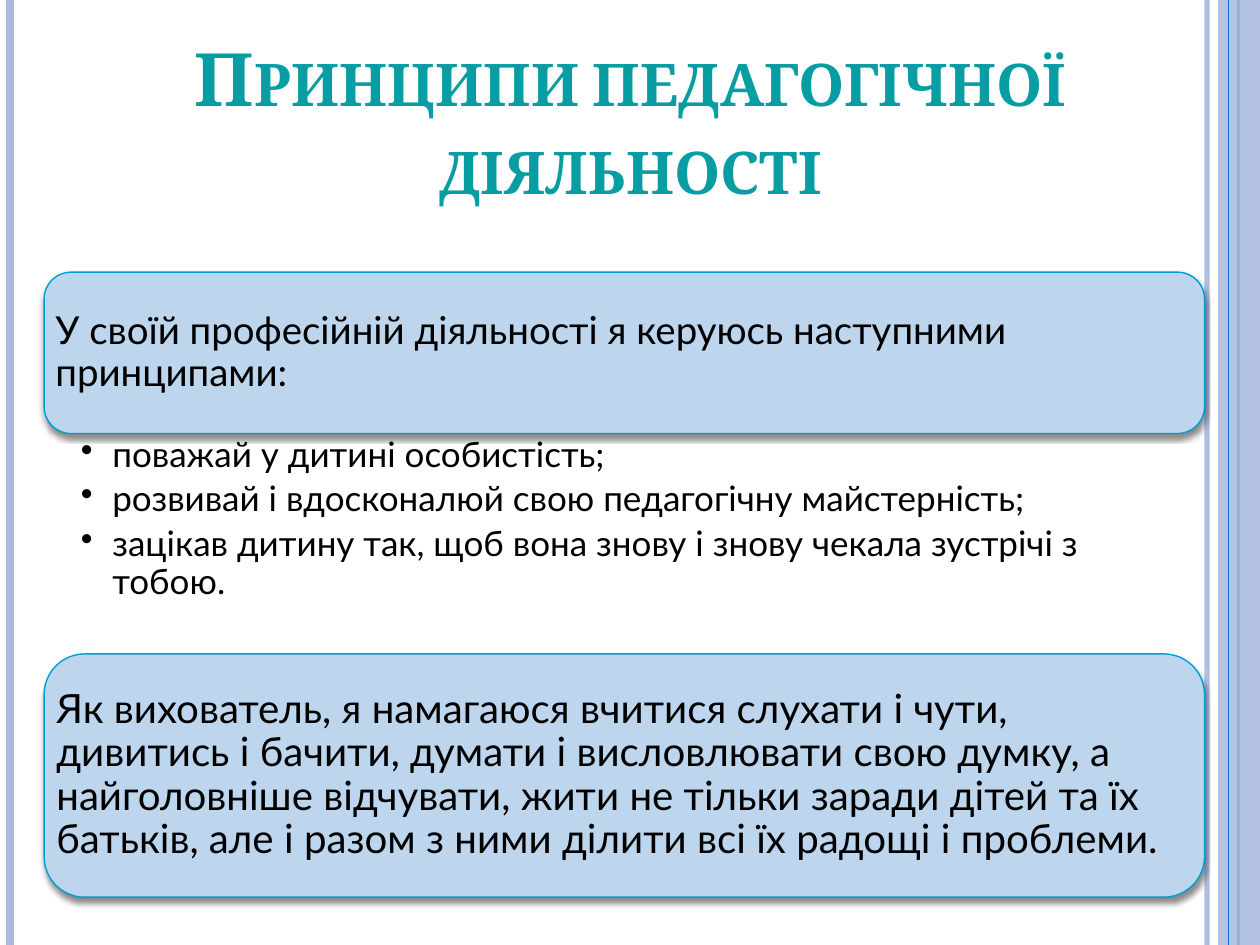
from lxml import etree
from pptx import Presentation
from pptx.dml.color import RGBColor
from pptx.enum.shapes import MSO_CONNECTOR, MSO_SHAPE
from pptx.enum.text import MSO_ANCHOR, PP_ALIGN
from pptx.oxml import parse_xml
from pptx.oxml.ns import nsdecls, qn
from pptx.util import Pt

STRAIGHT = MSO_CONNECTOR.STRAIGHT
RECT = MSO_SHAPE.RECTANGLE
ROUNDED = MSO_SHAPE.ROUNDED_RECTANGLE
TOP, MIDDLE, BOTTOM = MSO_ANCHOR.TOP, MSO_ANCHOR.MIDDLE, MSO_ANCHOR.BOTTOM
LEFT, CENTER = PP_ALIGN.LEFT, PP_ALIGN.CENTER

WIDTH, HEIGHT = 720, 540
PALE, BLUE, TEAL = "ABBBDF", "0F6FC6", "089CA3"
CARD_FILL, CARD_LINE, BLACK = "BDD5ED", "009DD9", "000000"
CARD_LEFT, CARD_WIDTH = 25.2, 663.12
CORNER = 0.16667
CORNER_INSET = 0.29289 * CORNER

TITLE = "Принципи педагогічної діяльності"
INTRO = "У своїй професійній діяльності я керуюсь наступними принципами:"
PRINCIPLES = [
    "поважай у дитині особистість;",
    "розвивай і вдосконалюй свою педагогічну майстерність;",
    "зацікав дитину так, щоб вона знову і знову чекала зустрічі з тобою.",
]
CREDO = (
    "Як вихователь, я намагаюся вчитися слухати і чути, дивитись і бачити, "
    "думати і висловлювати свою думку, а найголовніше відчувати, жити не тільки "
    "заради дітей та їх батьків, але і разом з ними ділити всі їх радощі і проблеми."
)


def rgb(value):
    return RGBColor.from_string(value)


def apply(target, values):
    for name, value in values.items():
        setattr(target, name, value)


def set_alpha(fill_parent, percent):
    color = fill_parent.find(".//" + qn("a:srgbClr"))
    etree.SubElement(color, qn("a:alpha")).set("val", str(percent * 1000))


def set_frame(tf, anchor, margins):
    left, top, right, bottom = (Pt(m) for m in margins)
    apply(tf, {
        "word_wrap": True, "vertical_anchor": anchor,
        "margin_left": left, "margin_top": top,
        "margin_right": right, "margin_bottom": bottom,
    })


def write(p, text, font, color, paragraph):
    apply(p, paragraph)
    r = p.add_run()
    r.text = text
    apply(r.font, font)
    r.font.color.rgb = rgb(color)
    return r


def add_rule(s, x, color, width, opacity=100):
    line = s.shapes.add_connector(STRAIGHT, Pt(x), 0, Pt(x), Pt(HEIGHT))
    line.line.color.rgb = rgb(color)
    line.line.width = Pt(width)
    etree.SubElement(line._element.spPr, qn("a:effectLst"))
    if opacity < 100:
        set_alpha(line._element.spPr, opacity)


def add_frame_lines(s):
    add_rule(s, 689.76, PALE, 3, 93)
    add_rule(s, 5.76, PALE, 4.5)
    add_rule(s, 707.76, BLUE, 1.5)
    left = 696
    band = s.shapes.add_shape(RECT, Pt(left), 0, Pt(WIDTH - left), Pt(HEIGHT))
    band.shadow.inherit = False
    band.fill.solid()
    band.fill.fore_color.rgb = rgb(PALE)
    band.line.fill.background()
    set_alpha(band._element.spPr, 87)
    add_rule(s, 702, BLUE, 0.75)


def add_title(s, box):
    sp = s.shapes.add_textbox(*(Pt(v) for v in box))
    tf = sp.text_frame
    set_frame(tf, BOTTOM, (7.2, 3.6, 7.2, 3.6))
    font = {"name": "Cambria", "size": Pt(42), "bold": True}
    r = write(tf.paragraphs[0], TITLE, font, TEAL, {"alignment": CENTER})
    r.font._element.set("cap", "small")


def add_card(s, box, text, size, inset):
    sp = s.shapes.add_shape(ROUNDED, *(Pt(v) for v in box))
    sp.adjustments[0] = CORNER
    sp.fill.solid()
    sp.fill.fore_color.rgb = rgb(CARD_FILL)
    sp.line.color.rgb = rgb(CARD_LINE)
    sp.line.width = Pt(0.79)
    sp._element.spPr.append(parse_xml(
        f'<a:effectLst {nsdecls("a")}>'
        f'<a:outerShdw blurRad="{Pt(3)}" dist="{Pt(2.4)}" dir="5400000" rotWithShape="0">'
        f'<a:srgbClr val="{BLACK}"><a:alpha val="45000"/></a:srgbClr>'
        '</a:outerShdw></a:effectLst>'))
    margin = max(0, inset - CORNER_INSET * box[3])
    set_frame(sp.text_frame, MIDDLE, [margin] * 4)
    write(sp.text_frame.paragraphs[0], text, {"name": "Lato", "size": Pt(size)},
          BLACK, {"alignment": LEFT, "line_spacing": 0.9})


def add_principles(s, box):
    sp = s.shapes.add_textbox(*(Pt(v) for v in box))
    tf = sp.text_frame
    set_frame(tf, TOP, (21, 2, 11.5, 2))
    paragraph = {"alignment": LEFT, "line_spacing": 0.9, "space_after": Pt(4)}
    for i, text in enumerate(PRINCIPLES):
        p = tf.add_paragraph() if i else tf.paragraphs[0]
        write(p, text, {"name": "Lato", "size": Pt(20)}, BLACK, paragraph)
        pPr = p._p.get_or_add_pPr()
        pPr.set("marL", str(Pt(18)))
        pPr.set("indent", str(-Pt(18)))
        etree.SubElement(pPr, qn("a:buChar")).set("char", "•")


def main():
    prs = Presentation()
    prs.slide_width, prs.slide_height = Pt(WIDTH), Pt(HEIGHT)
    s = prs.slides.add_slide(prs.slide_layouts[6])
    add_frame_lines(s)
    add_title(s, (39.6, 20.88, 641.52, 102.24))
    add_card(s, (CARD_LEFT, 155.5, CARD_WIDTH, 92.2), INTRO, 22, 6.5)
    add_principles(s, (CARD_LEFT, 247.7, CARD_WIDTH, 110.9))
    add_card(s, (CARD_LEFT, 373.7, CARD_WIDTH, 139), CREDO, 23, 7)
    prs.save("out.pptx")


if __name__ == "__main__":
    main()
